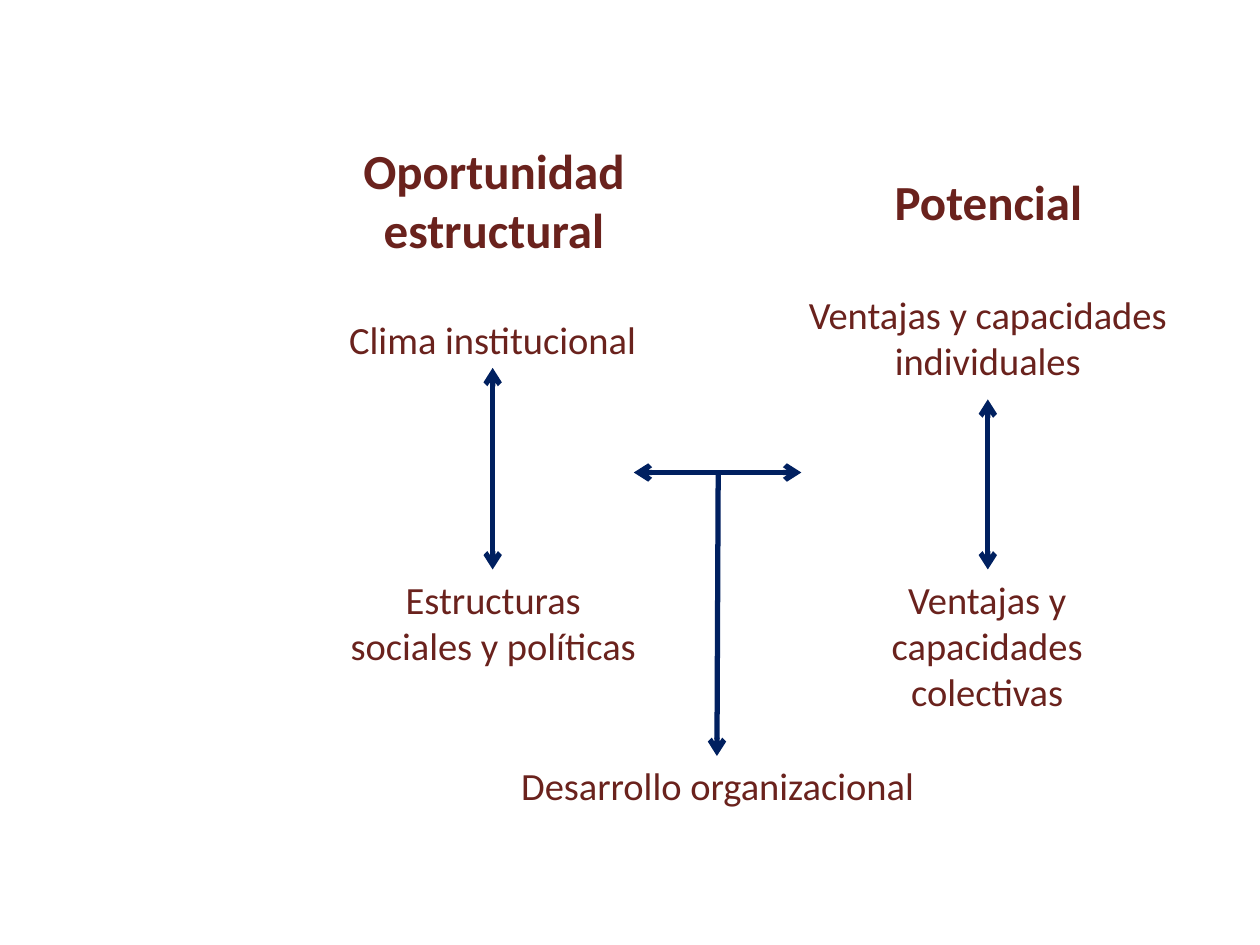
from lxml.etree import SubElement
from pptx import Presentation
from pptx.dml.color import RGBColor
from pptx.enum.shapes import MSO_CONNECTOR
from pptx.enum.text import PP_ALIGN
from pptx.oxml.ns import qn
from pptx.util import Inches, Pt

BROWN = "6A221D"
NAVY = "002060"


def add_text(text, left, top, width, height, size=22, bold=False, wrap=True):
    box = page.shapes.add_textbox(Inches(left), Inches(top), Inches(width), Inches(height))
    box.text_frame.word_wrap = wrap
    box.text_frame.text = text
    for para in box.text_frame.paragraphs:
        para.alignment = PP_ALIGN.CENTER
        for span in para.runs:
            span.font.name = "Calibri"
            span.font.size = Pt(size)
            span.font.bold = bold
            span.font.color.rgb = RGBColor.from_string(BROWN)


def add_arrow(start, end, ends=("headEnd", "tailEnd")):
    arrow = page.shapes.add_connector(
        MSO_CONNECTOR.STRAIGHT, *[Inches(value) for value in (*start, *end)]
    )
    arrow.line.color.rgb = RGBColor.from_string(NAVY)
    arrow.line.width = Pt(3)
    outline = arrow.line._get_or_add_ln()
    for name in ends:
        SubElement(outline, qn(f"a:{name}"), type="arrow")
    SubElement(arrow._element.spPr, qn("a:effectLst"))


deck = Presentation()
deck.slide_width = Inches(10)
deck.slide_height = Inches(7.5)
page = deck.slides.add_slide(deck.slide_layouts[6])

add_text("Oportunidad\nestructural", 2.77, 1.07, 2.3, 1.04, size=28, bold=True, wrap=False)
add_text("Potencial", 6.99, 1.31, 1.71, 0.57, size=28, bold=True, wrap=False)

add_text("Clima institucional", 2.66, 2.46, 2.5, 0.47, wrap=False)
add_text("Estructuras sociales y políticas", 2.68, 4.52, 2.47, 1.21)
add_text("Ventajas y capacidades individuales", 6.06, 2.26, 3.56, 0.84)
add_text("Ventajas y capacidades colectivas", 6.41, 4.52, 2.85, 1.21)
add_text("Desarrollo organizacional", 4.02, 6, 3.35, 0.47, wrap=False)

add_arrow((3.91, 2.92), (3.91, 4.52))
add_arrow((7.84, 4.52), (7.84, 3.17))
add_arrow((5.03, 3.75), (6.36, 3.75))
add_arrow((5.7, 3.75), (5.69, 6), ends=("tailEnd",))

deck.save("out.pptx")
